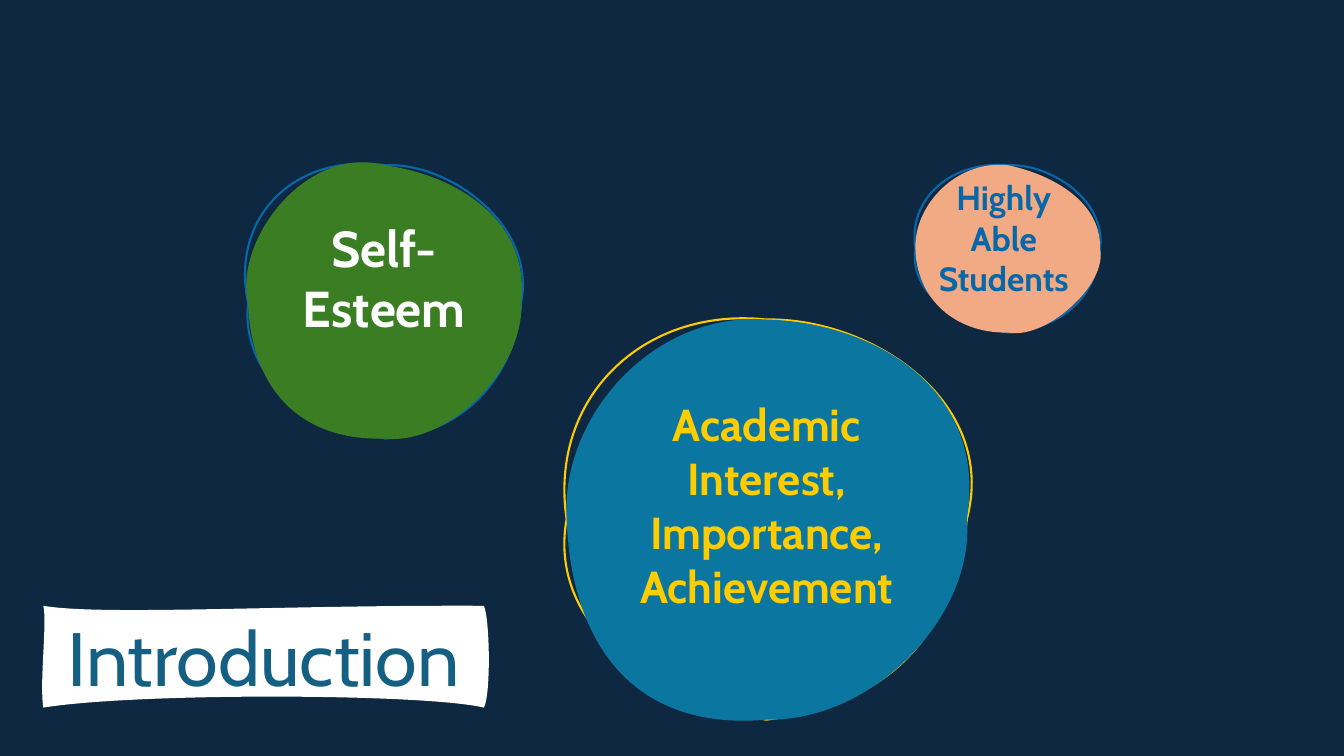
from dataclasses import dataclass

from lxml import etree
from pptx import Presentation
from pptx import util as u
from pptx.dml.color import RGBColor
from pptx.enum import text
from pptx.oxml import ns

# The slide is a grid of 1333 columns by 750 rows, each cell 0.01 inch.
COLUMNS, ROWS = 1333, 750
CELL = u.Inches(0.01)
FONT = "Cabin"
NAVY, BLUE, YELLOW, WHITE = "0E2841", "0668A9", "FFCC00", "FFFFFF"

Point = tuple[float, float]
Curve = list[int]


@dataclass
class Box:
    left: int
    top: int
    width: int
    height: int

    def corners(self) -> list[Point]:
        right, bottom = self.left + self.width, self.top + self.height
        return [(self.left, self.top), (right, self.top), (right, bottom), (self.left, bottom)]

    def side_middles(self) -> list[Point]:
        """Middles of the sides, clockwise from the left one."""
        corners = self.corners()
        pairs = zip([corners[-1]] + corners[:-1], corners)
        return [((a[0] + b[0]) / 2, (a[1] + b[1]) / 2) for a, b in pairs]


@dataclass
class Sketch:
    """A hand-drawn shape: eight control points (x, y) each for its line and its fill."""
    box: Box
    fill: str
    line: str
    line_width: float
    outline: Curve
    interior: Curve


@dataclass
class Label:
    box: Box
    lines: list[str]
    size: int
    color: str


BLOBS = [
    Sketch(Box(562, 317, 397, 397), "0B76A0", YELLOW, 1.5,
           [544, 395, 638, 304, 864, 315, 990, 398, 945, 623, 892, 697, 636, 690, 544, 615],
           [556, 412, 649, 309, 868, 320, 980, 386, 967, 610, 867, 716, 635, 725, 567, 647]),
    Sketch(Box(246, 164, 271, 271), "3B7D23", BLUE, 1.5,
           [228, 214, 294, 151, 441, 160, 532, 220, 512, 373, 459, 432, 296, 419, 239, 370],
           [232, 239, 303, 143, 448, 173, 526, 215, 520, 368, 443, 442, 301, 438, 249, 389]),
    Sketch(Box(908, 164, 183, 166), "F2AA84", BLUE, 1.5,
           [900, 196, 945, 159, 1042, 162, 1098, 199, 1088, 292, 1057, 325, 944, 320, 902, 289],
           [906, 204, 949, 158, 1043, 173, 1093, 200, 1099, 281, 1039, 337, 948, 331, 909, 297]),
]
BANNER = Sketch(Box(43, 601, 437, 101), WHITE, NAVY, 2,
                [246, 594, 296, 590, 476, 648, 477, 662, 330, 694, 181, 686, 43, 664, 43, 640],
                [102, 611, 281, 600, 486, 615, 487, 689, 421, 688, 136, 687, 39, 677, 47, 617])
LABELS = [
    Label(Box(262, 210, 238, 131), ["Self-Esteem"], 36, WHITE),
    Label(Box(904, 171, 183, 131), ["Highly Able Students"], 24, BLUE),
    Label(Box(581, 389, 359, 226), ["Academic Interest,", "Importance, Achievement"], 32, YELLOW),
]


def color(value: str) -> RGBColor:
    return RGBColor.from_string(value)


def add_curve(path_list, box: Box, anchors: list[Point], controls: Curve, **paint: str) -> None:
    """Add a closed path that bends from anchor to anchor, two controls at a time."""
    path = etree.SubElement(path_list, ns.qn("a:path"), w=str(box.width), h=str(box.height), **paint)

    def add_step(tag: str, points: list[Point]) -> None:
        step = etree.SubElement(path, ns.qn(tag))
        for x, y in points:
            etree.SubElement(step, ns.qn("a:pt"), x=str(round(x - box.left)), y=str(round(y - box.top)))

    pairs = list(zip(controls[::2], controls[1::2]))
    add_step("a:moveTo", anchors[:1])
    for index, anchor in enumerate(anchors[1:] + anchors[:1]):
        add_step("a:cubicBezTo", pairs[2 * index:2 * index + 2] + [anchor])
    add_step("a:close", [])


def add_sketch(slide, sketch: Sketch, anchors: list[Point]) -> None:
    corners = sketch.box.corners()
    builder = slide.shapes.build_freeform(*corners[0], scale=CELL)
    builder.add_line_segments(corners[1:], close=True)
    shape = builder.convert_to_shape()
    shape.shadow.inherit = False
    shape.fill.solid()
    shape.fill.fore_color.rgb = color(sketch.fill)
    shape.line.color.rgb = color(sketch.line)
    shape.line.width = u.Pt(sketch.line_width)
    path_list = next(shape.element.iter(ns.qn("a:pathLst")))
    path_list.clear()
    add_curve(path_list, sketch.box, anchors, sketch.outline, fill="none")
    add_curve(path_list, sketch.box, anchors, sketch.interior, stroke="0")


def place(shape, box: Box) -> None:
    shape.left, shape.top = box.left * CELL, box.top * CELL
    shape.width, shape.height = box.width * CELL, box.height * CELL


def write_line(paragraph, words: str, size: int, ink: str, bold: bool) -> None:
    paragraph.alignment = text.PP_ALIGN.CENTER
    run = paragraph.add_run()
    run.text = words
    run.font.name = FONT
    run.font.size = u.Pt(size)
    run.font.bold = bold
    run.font.color.rgb = color(ink)


def add_label(slide, label: Label) -> None:
    shape = slide.shapes.add_textbox(0, 0, 0, 0)
    place(shape, label.box)
    frame = shape.text_frame
    frame.word_wrap = True
    for index, words in enumerate(label.lines):
        paragraph = frame.add_paragraph() if index else frame.paragraphs[0]
        write_line(paragraph, words, label.size, label.color, True)


def set_title(slide, words: str) -> None:
    """Write the title in front of the banner."""
    title = slide.shapes.title
    title.element.getparent().append(title.element)
    place(title, BANNER.box)
    frame = title.text_frame
    frame.word_wrap = False
    frame.auto_size = text.MSO_AUTO_SIZE.NONE
    frame.vertical_anchor = text.MSO_ANCHOR.MIDDLE
    write_line(frame.paragraphs[0], words, 54, "156082", False)


def main() -> None:
    presentation = Presentation()
    presentation.slide_width, presentation.slide_height = COLUMNS * CELL, ROWS * CELL
    slide = presentation.slides.add_slide(presentation.slide_layouts[5])
    slide.background.fill.solid()
    slide.background.fill.fore_color.rgb = color(NAVY)
    for blob in BLOBS:
        add_sketch(slide, blob, blob.box.side_middles())
    for label in LABELS:
        add_label(slide, label)
    add_sketch(slide, BANNER, BANNER.box.corners())
    set_title(slide, "Introduction")
    presentation.save("out.pptx")


if __name__ == "__main__":
    main()
